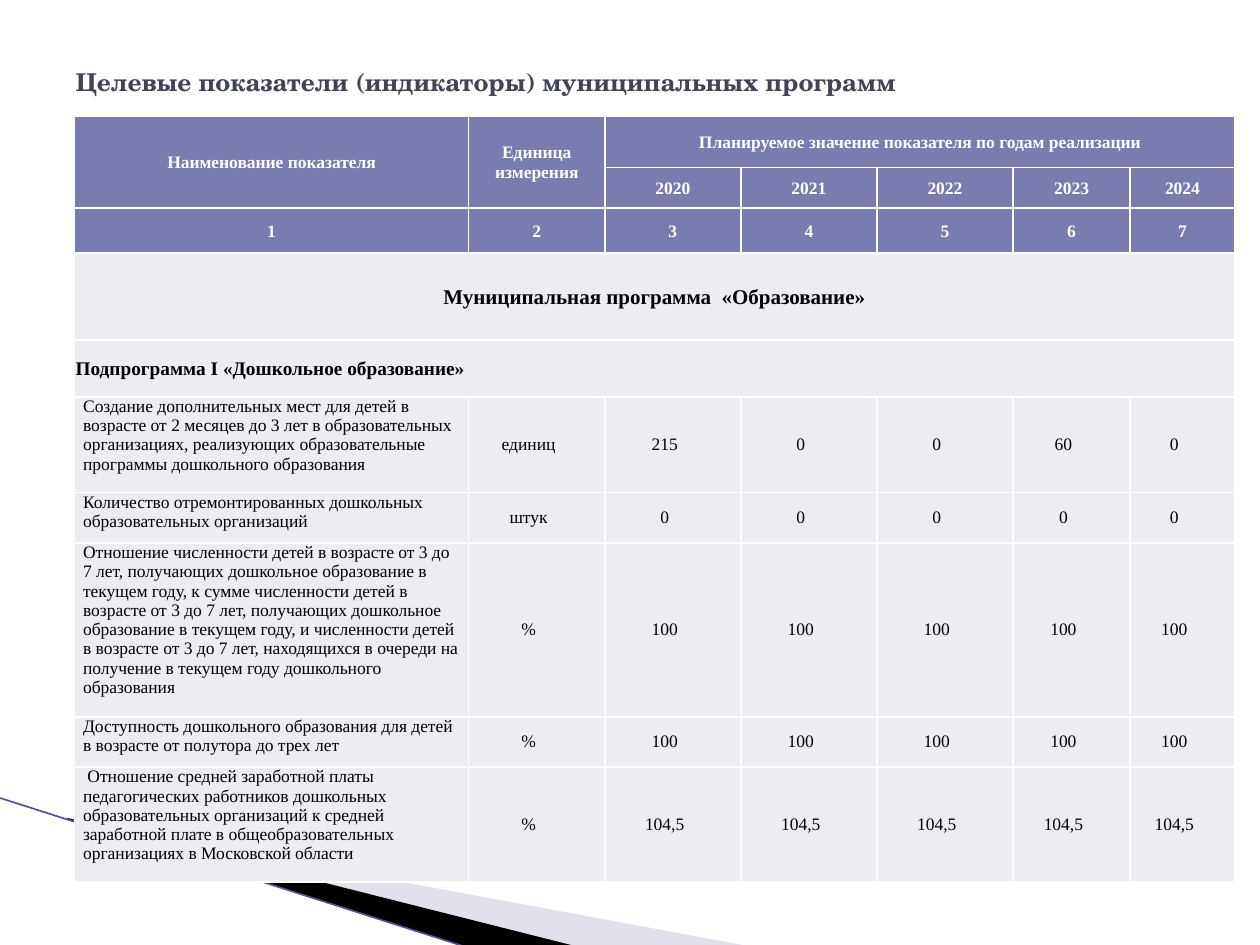
"""Build a slide with a table of target indicators for municipal programmes."""
from pptx import Presentation
from pptx import util as u
from pptx.dml.color import RGBColor
from pptx.enum import shapes, text
from pptx.oxml import parse_xml
from pptx.oxml.ns import nsdecls, qn
from lxml import etree


def color(value):
    return RGBColor.from_string(value)


def fill_cell(cell, wording, fill, size, bold, ink, align, margins):
    cell.fill.solid()
    cell.fill.fore_color.rgb = color(fill)
    cell.margin_left, cell.margin_top, cell.margin_right, cell.margin_bottom = map(u.Inches, margins)
    cell.vertical_anchor = text.MSO_ANCHOR.MIDDLE
    para = cell.text_frame.paragraphs[0]
    para.text = wording
    para.alignment = align
    para.font.name = "Times New Roman"
    para.font.size = u.Pt(size)
    para.font.bold = bold
    para.font.color.rgb = color(ink)


deck = Presentation()
deck.slide_width, deck.slide_height = u.Inches(10), u.Inches(7.5)
page = deck.slides.add_slide(deck.slide_layouts[5])

title = page.shapes.title
title.left, title.top, title.width, title.height = map(u.Inches, (0.5, 0.3, 9, 0.69))
title.text_frame.vertical_anchor = text.MSO_ANCHOR.MIDDLE
para = title.text_frame.paragraphs[0]
para.text = "Целевые показатели (индикаторы) муниципальных программ"
para.alignment = text.PP_ALIGN.LEFT
para.font.name = "TeX Gyre Schola"
para.font.size = u.Pt(14)
para.font.bold = True
para.font.color.rgb = color("424456")

wedges = [
    ("B6B6D1", 40, [(0.55, 6.51), (5.95, 7.51), (4.56, 7.51), (0.55, 6.5)]),
    ("000000", 100, [(0.53, 6.49), (4.57, 7.51), (3.72, 7.52), (0.54, 6.5)]),
]
for fill, opacity, corners in wedges:
    points = [(u.Inches(x), u.Inches(y)) for x, y in corners]
    builder = page.shapes.build_freeform(*points[0])
    builder.add_line_segments(points[1:], close=True)
    wedge = builder.convert_to_shape()
    wedge.shadow.inherit = False
    wedge.line.fill.background()
    wedge.fill.solid()
    wedge.fill.fore_color.rgb = color(fill)
    if opacity < 100:
        tint = wedge.fill._xPr.find(qn("a:solidFill"))[0]
        etree.SubElement(tint, qn("a:alpha")).set("val", str(opacity * 1000))

edge = page.shapes.add_connector(
    shapes.MSO_CONNECTOR.STRAIGHT, u.Inches(-0.01), u.Inches(6.33), u.Inches(3.71), u.Inches(7.52))
edge.line.color.rgb = color("53548A")
edge.line.width = u.Pt(0.95)
etree.SubElement(edge._element.spPr, qn("a:effectLst"))

header = [
    ["Наименование показателя", "Единица измерения",
     "Планируемое значение показателя по годам реализации", "", "", "", ""],
    ["", "", "2020", "2021", "2022", "2023", "2024"],
    ["1", "2", "3", "4", "5", "6", "7"],
]
sections = [
    ("Муниципальная программа  «Образование»", 12, text.PP_ALIGN.CENTER),
    ("Подпрограмма I «Дошкольное образование»", 11, text.PP_ALIGN.LEFT),
]
indicators = [
    ["Создание дополнительных мест для детей в возрасте от 2 месяцев до 3 лет в образовательных "
     "организациях, реализующих образовательные программы дошкольного образования",
     "единиц", "215", "0", "0", "60", "0"],
    ["Количество отремонтированных дошкольных образовательных организаций", "штук"] + ["0"] * 5,
    ["Отношение численности детей в возрасте от 3 до 7 лет, получающих дошкольное образование в "
     "текущем году, к сумме численности детей в возрасте от 3 до 7 лет, получающих дошкольное "
     "образование в текущем году, и численности детей в возрасте от 3 до 7 лет, находящихся в "
     "очереди на получение в текущем году дошкольного образования", "%"] + ["100"] * 5,
    ["Доступность дошкольного образования для детей в возрасте от полутора до трех лет", "%"]
    + ["100"] * 5,
    [" Отношение средней заработной платы педагогических работников дошкольных образовательных "
     "организаций к средней заработной плате в общеобразовательных организациях в Московской "
     "области", "%"] + ["104,5"] * 5,
]
widths = [3.13, 1.08, 1.08, 1.08, 1.08, 0.93, 0.83]
heights = [0.41, 0.32, 0.36, 0.69, 0.45, 0.76, 0.4, 1.38, 0.4, 0.91]

table = page.shapes.add_table(
    len(heights), len(widths), u.Inches(0.59), u.Inches(0.92),
    u.Inches(sum(widths)), u.Inches(sum(heights))).table
table.first_row = table.horz_banding = False
for column, width in zip(table.columns, widths):
    column.width = u.Inches(width)
for row, height in zip(table.rows, heights):
    row.height = u.Inches(height)

for first, last in [((0, 0), (1, 0)), ((0, 1), (1, 1)), ((0, 2), (0, 6)), ((3, 0), (3, 6)), ((4, 0), (4, 6))]:
    table.cell(*first).merge(table.cell(*last))

tight = (0.01, 0.01, 0.01, 0)
for r, labels in enumerate(header):
    for c, label in enumerate(labels):
        fill_cell(table.cell(r, c), label, "7A7BAE", 10, True, "FFFFFF", text.PP_ALIGN.CENTER, tight)
for r, (label, size, align) in enumerate(sections, len(header)):
    for c in range(len(widths)):
        fill_cell(table.cell(r, c), "" if c else label, "ECECF2", size, True, "000000", align, tight)
for r, values in enumerate(indicators, len(header) + len(sections)):
    for c, value in enumerate(values):
        align = text.PP_ALIGN.CENTER if c else text.PP_ALIGN.LEFT
        margins = (0.07, 0, 0.2 if c else 0.07, 0)
        fill_cell(table.cell(r, c), value, "ECECF2", 10, False, "000000", align, margins)
    table.cell(r, 0).vertical_anchor = text.MSO_ANCHOR.TOP

for cell in table.iter_cells():
    properties = cell._tc.get_or_add_tcPr()
    for position, side in enumerate(("lnL", "lnR", "lnT", "lnB")):
        properties.insert(position, parse_xml(
            f'<a:{side} {nsdecls("a")} w="12700"><a:solidFill><a:srgbClr val="FFFFFF"/>'
            f'</a:solidFill></a:{side}>'))

deck.save("out.pptx")
